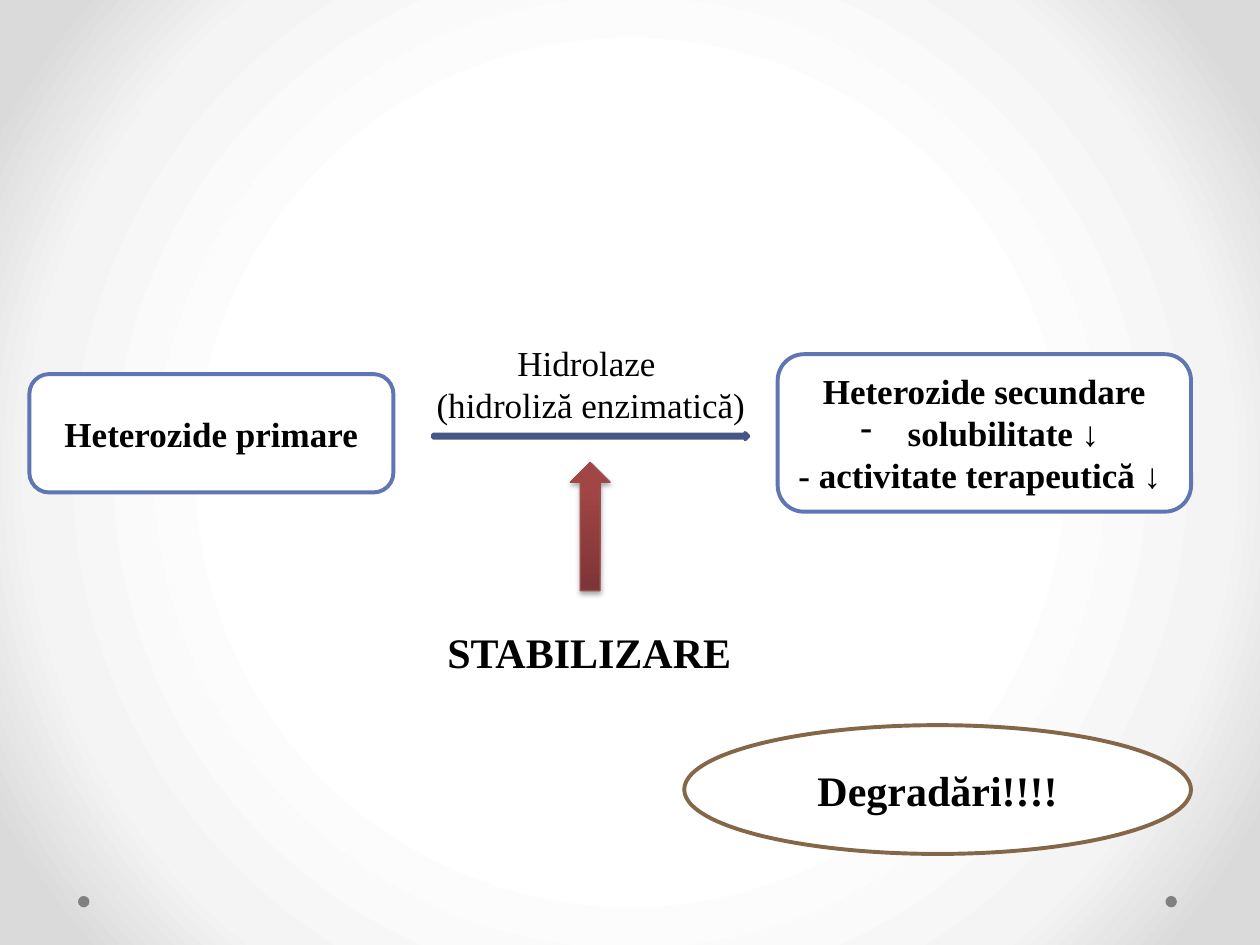
import pptx
import pptx.util
import pptx.dml.color
import pptx.enum.shapes
import pptx.enum.text
import pptx.oxml
import pptx.oxml.ns

Pt = pptx.util.Pt
Kind = pptx.enum.shapes.MSO_SHAPE
Align = pptx.enum.text.PP_ALIGN

THEME = {
    "font": "Times New Roman", "body": 20, "head": 24, "edge": 2.25,
    "ink": "000000", "paper": "FFFFFF", "blue": "6076B4", "navy": "475785",
    "brown": "846648", "red": "9A4E4E", "dot": "808080",
    "glow": [(50, "FFFFFF"), (76, "F4F4F4"), (92, "DADADA")],
    "rise": [(0, "7D3535"), (80, "A24545"), (100, "A44343")],
}

DOTS = [(666, 512), (44.6, 512)]
DOT = 6.5
NODES = [
    (Kind.ROUNDED_RECTANGLE, (16.8, 213.8, 208, 67.6), "blue", "body",
     ["Heterozide primare"]),
    (Kind.ROUNDED_RECTANGLE, (444.4, 202.4, 236.2, 90), "blue", "body",
     ["Heterozide secundare", "• solubilitate ↓ ", "- activitate terapeutică ↓ "]),
    (Kind.OVAL, (391, 414.4, 289.6, 73.6), "brown", "head", ["Degradări!!!!"]),
]
LABELS = [
    ((242, 191.4, 191.4, 55.7), "body", False, ["Hidrolaze ", "(hidroliză enzimatică)"]),
    ((247.4, 354.3, 178.6, 36.4), "head", True, ["STABILIZARE"]),
]
FLOW = (247.4, 247.4, 180.2, 3.6)
RISE = (325.9, 264.2, 22.7, 73.4)

NS = pptx.oxml.ns.nsdecls("a", "p")


def tint(name):
    return pptx.dml.color.RGBColor.from_string(THEME[name])


def grad(stops, way):
    marks = "".join(f'<a:gs pos="{pos * 1000}"><a:srgbClr val="{hue}"/></a:gs>'
                    for pos, hue in stops)
    return f'<a:gradFill rotWithShape="1"><a:gsLst>{marks}</a:gsLst>{way}</a:gradFill>'


def write(shape, lines, size="body", bold=True, wrap=True):
    frame = shape.text_frame
    frame.word_wrap = wrap
    for num, line in enumerate(lines):
        para = frame.paragraphs[0] if num == 0 else frame.add_paragraph()
        para.alignment = Align.CENTER
        if line.startswith("• "):
            line = line[2:]
            props = para._p.get_or_add_pPr()
            props.set("marL", str(Pt(27)))
            props.set("indent", str(-Pt(27)))
            props.append(pptx.oxml.parse_xml(f'<a:buChar {NS} char="-"/>'))
        run = para.add_run()
        run.text = line
        run.font.name = THEME["font"]
        run.font.size = Pt(THEME[size])
        run.font.bold = bold
        run.font.color.rgb = tint("ink")


def draw(slide, kind, box, fill, line=None, width=THEME["edge"]):
    shape = slide.shapes.add_shape(kind, *map(Pt, box))
    shape.shadow.inherit = False
    shape.fill.solid()
    shape.fill.fore_color.rgb = tint(fill)
    if line:
        shape.line.color.rgb = tint(line)
        shape.line.width = Pt(width)
    else:
        shape.line.fill.background()
    return shape


def paint(slide):
    way = ('<a:path path="circle"><a:fillToRect l="50000" t="50000" '
           'r="50000" b="50000"/></a:path>')
    back = pptx.oxml.parse_xml(
        f'<p:bg {NS}><p:bgPr>{grad(THEME["glow"], way)}<a:effectLst/></p:bgPr></p:bg>')
    slide.shapes._spTree.addprevious(back)


def lift(shape):
    props = shape._element.spPr
    old = props.find(pptx.oxml.ns.qn("a:solidFill"))
    fill = grad(THEME["rise"], '<a:lin ang="16200000" scaled="0"/>')
    new = pptx.oxml.parse_xml(fill.replace("<a:gradFill", f"<a:gradFill {NS}", 1))
    props.replace(old, new)
    props.find(pptx.oxml.ns.qn("a:effectLst")).append(pptx.oxml.parse_xml(
        f'<a:outerShdw {NS} blurRad="{Pt(3.1)}" dist="{Pt(1.8)}" dir="5400000" '
        'rotWithShape="0"><a:srgbClr val="000000"><a:alpha val="35000"/>'
        '</a:srgbClr></a:outerShdw>'))


def main():
    deck = pptx.Presentation()
    deck.slide_width, deck.slide_height = Pt(720), Pt(540)
    slide = deck.slides.add_slide(deck.slide_layouts[6])
    paint(slide)
    for left, top in DOTS:
        draw(slide, Kind.OVAL, (left, top, DOT, DOT), "dot")
    for kind, box, line, size, lines in NODES:
        shape = draw(slide, kind, box, "paper", line)
        shape.text_frame.vertical_anchor = pptx.enum.text.MSO_ANCHOR.MIDDLE
        write(shape, lines, size)
    draw(slide, Kind.RIGHT_ARROW, FLOW, "blue", "navy")
    rise = draw(slide, Kind.UP_ARROW, RISE, "red", "red", 0.75)
    lift(rise)
    for box, size, bold, lines in LABELS:
        label = slide.shapes.add_textbox(*map(Pt, box))
        write(label, lines, size, bold, wrap=False)
    deck.save("out.pptx")


if __name__ == "__main__":
    main()
